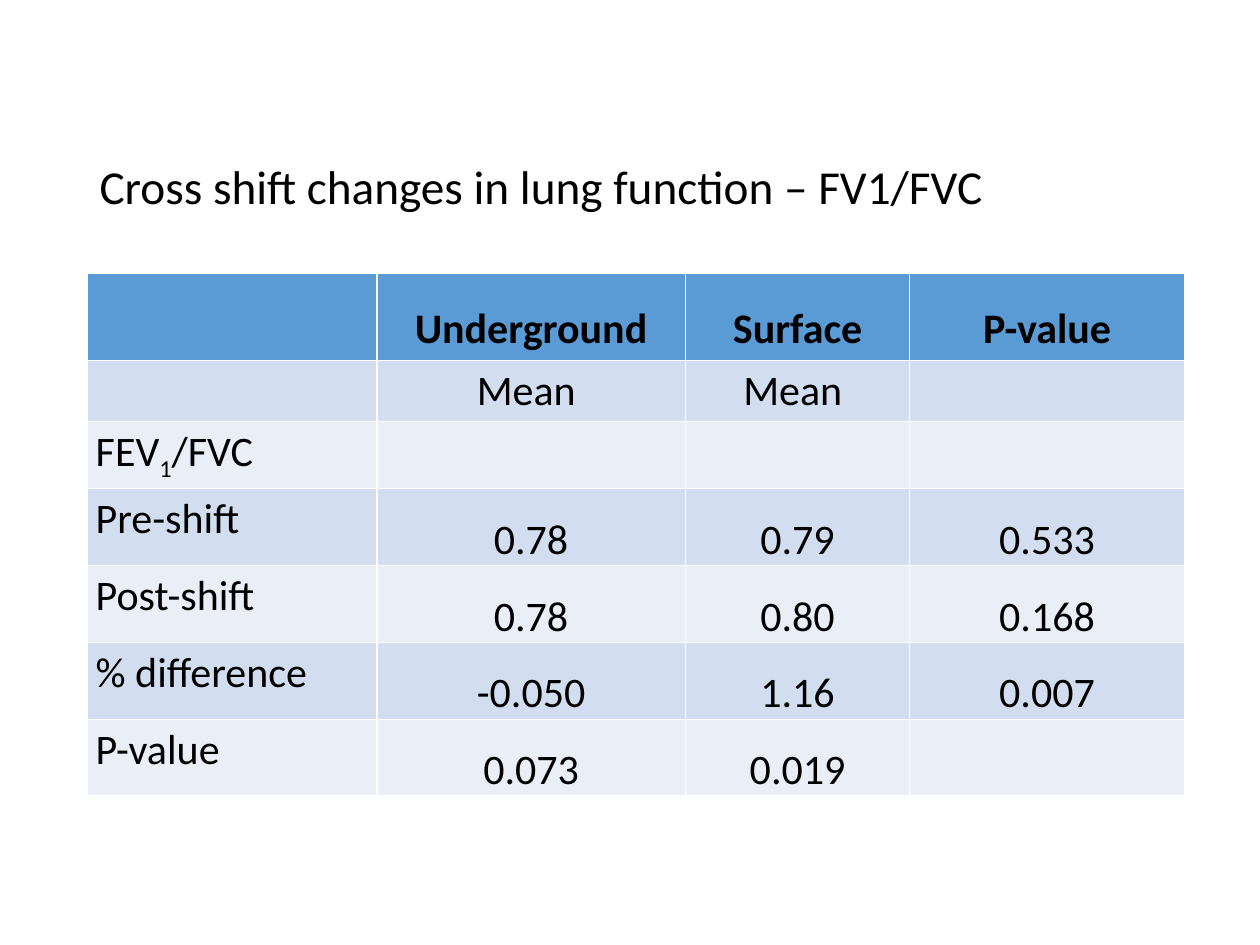
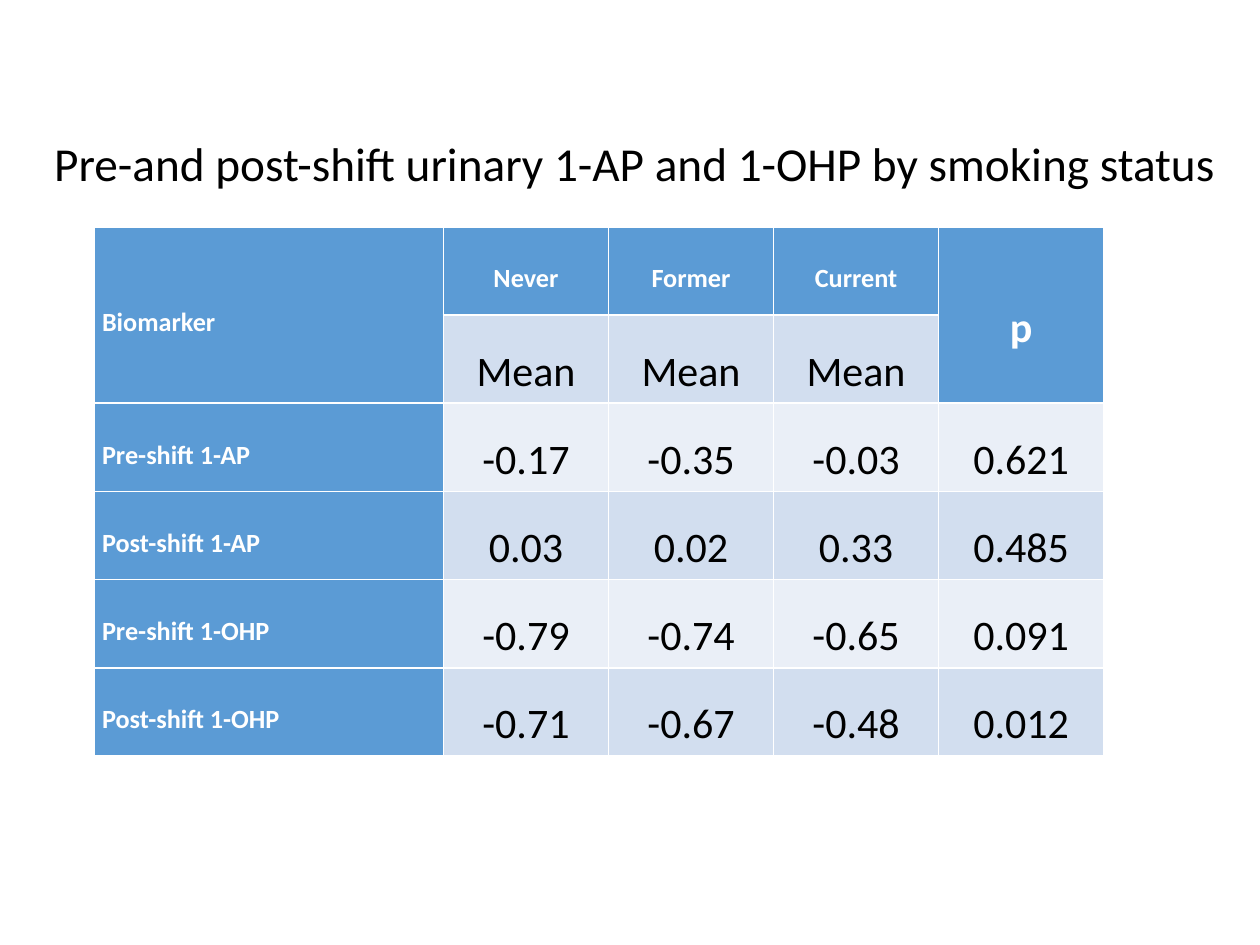
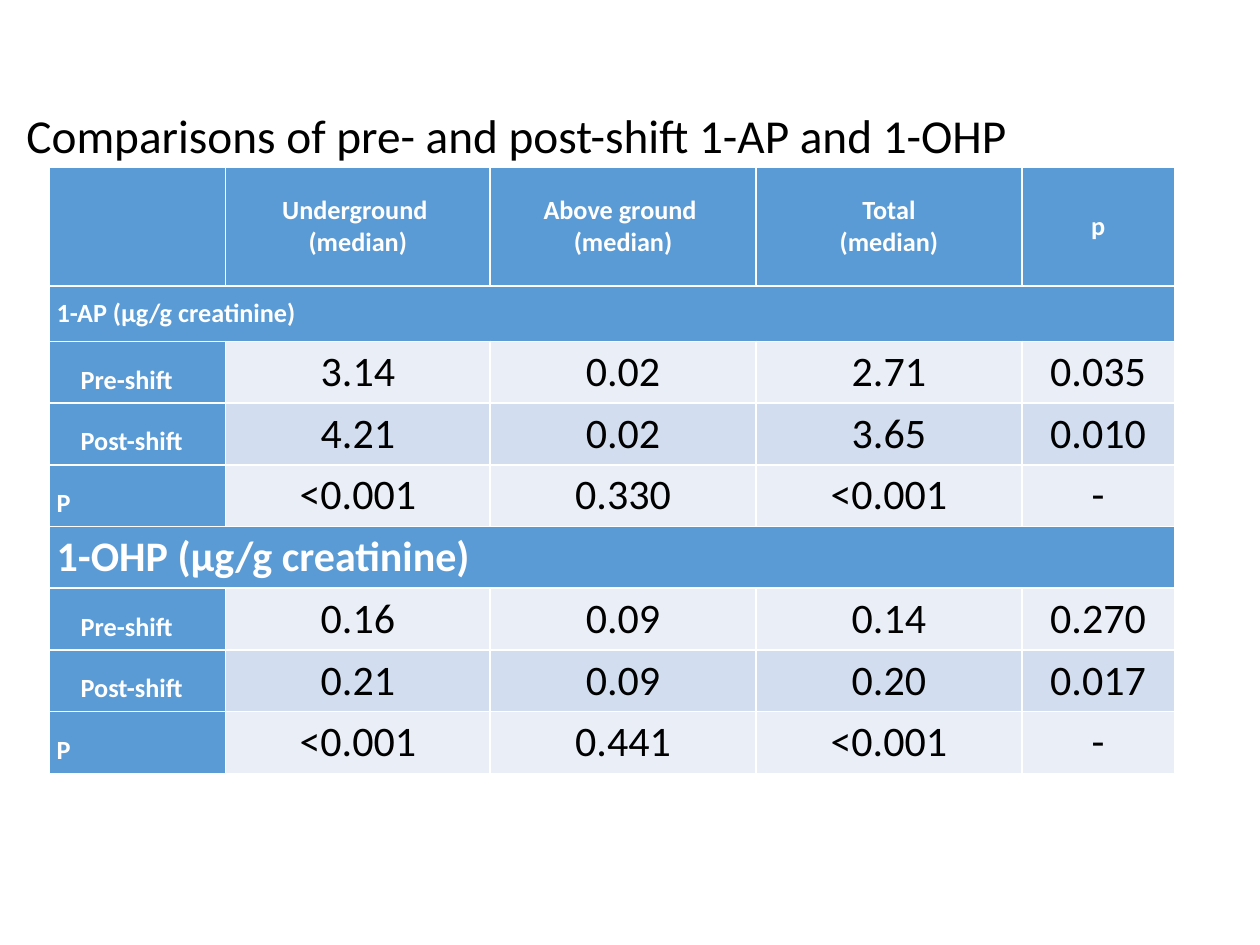
"""Build three slides of lung function and urinary biomarker tables."""
from dataclasses import dataclass, replace
from typing import NamedTuple, Optional

from pptx import Presentation
from pptx import util as u
from pptx.dml.color import RGBColor
from pptx.enum import text as t

PX = 9144
FONT = "Calibri"
TITLE_SIZE = 27
BLACK = RGBColor(0x00, 0x00, 0x00)
WHITE = RGBColor(0xFF, 0xFF, 0xFF)
BLUE = RGBColor(0x5B, 0x9B, 0xD5)
BANDS = (RGBColor(0xEA, 0xEF, 0xF7), RGBColor(0xD2, 0xDE, 0xEF))
SUBSCRIPT_MARK = "|"


class Box(NamedTuple):
    left: int
    top: int
    width: int
    height: int


@dataclass(frozen=True)
class CellStyle:
    size: int = 24
    color: RGBColor = BLACK
    bold: bool = False
    align: t.PP_ALIGN = t.PP_ALIGN.CENTER
    spacing: float = 1.0
    anchor: t.MSO_ANCHOR = t.MSO_ANCHOR.MIDDLE
    pad_x: int = 6
    pad_y: int = 0
    indent: int = 0
    fill: Optional[RGBColor] = None


class Row(NamedTuple):
    height: int
    texts: tuple[str, ...]
    styles: tuple[CellStyle, ...]


class Span(NamedTuple):
    top: int
    left: int
    bottom: int
    right: int


@dataclass(frozen=True)
class TablePage:
    title: str
    title_box: Box
    left: int
    top: int
    columns: tuple[int, ...]
    rows: list[Row]
    spans: tuple[Span, ...] = ()


VALUE = CellStyle()
SPACED_VALUE = replace(VALUE, spacing=1.5)
LOOSE_VALUE = replace(VALUE, anchor=t.MSO_ANCHOR.TOP, pad_x=7, pad_y=4)
LOOSE_LABEL = replace(LOOSE_VALUE, align=t.PP_ALIGN.LEFT)

DARK_HEAD = replace(SPACED_VALUE, bold=True, fill=BLUE)
LOOSE_HEAD = replace(DARK_HEAD, pad_x=7, pad_y=4)
TOP_HEAD = replace(LOOSE_HEAD, anchor=t.MSO_ANCHOR.TOP)

HEAD = CellStyle(size=15, color=WHITE, bold=True, fill=BLUE)
SPACED_HEAD = replace(HEAD, spacing=1.5)
LARGE_HEAD = replace(SPACED_HEAD, size=24)
SECTION = replace(HEAD, align=t.PP_ALIGN.LEFT)
LARGE_SECTION = replace(SECTION, size=24)
LABEL = replace(SECTION, spacing=1.5)
INDENTED_LABEL = replace(LABEL, indent=19)


def data_row(height: int, label: CellStyle, value: CellStyle, *texts: str) -> Row:
    """Make a row of one label followed by equally styled values."""
    return Row(height, texts, (label,) + (value,) * (len(texts) - 1))


def lung_page() -> TablePage:
    """Describe the lung function table."""
    rows = [
        Row(68, ("", "Underground", "Surface", "P-value"),
            (DARK_HEAD, DARK_HEAD, TOP_HEAD, LOOSE_HEAD)),
        data_row(47, LOOSE_LABEL, LOOSE_VALUE, "", "Mean ", "Mean ", ""),
        data_row(47, LOOSE_LABEL, LOOSE_VALUE, "FEV|1|/FVC", "", "", ""),
    ]
    measures = (
        ("Pre-shift", "0.78", "0.79", "0.533"),
        ("Post-shift", "0.78", "0.80", "0.168"),
        ("% difference", "-0.050", "1.16", "0.007"),
        ("P-value", "0.073", "0.019", ""),
    )
    rows += [data_row(60, LOOSE_LABEL, SPACED_VALUE, *texts) for texts in measures]
    return TablePage("Cross shift changes in lung function – FV1/FVC",
                     Box(69, 96, 862, 109), 69, 217, (230, 245, 178, 218), rows)


def smoking_page() -> TablePage:
    """Describe the biomarker table by smoking status."""
    rows = [
        Row(70, ("Biomarker", "Never", "Former", "Current", "p"),
            (LABEL,) + (SPACED_HEAD,) * 3 + (LARGE_HEAD,)),
        data_row(70, LABEL, SPACED_VALUE, "", "Mean", "Mean", "Mean", ""),
    ]
    measures = (
        ("Pre-shift 1-AP", "-0.17", "-0.35", "-0.03", "0.621"),
        ("Post-shift 1-AP", "0.03", "0.02", "0.33", "0.485"),
        ("Pre-shift 1-OHP", "-0.79", "-0.74", "-0.65", "0.091"),
        ("Post-shift 1-OHP", "-0.71", "-0.67", "-0.48", "0.012"),
    )
    rows += [data_row(70, LABEL, SPACED_VALUE, *texts) for texts in measures]
    return TablePage("Pre-and post-shift urinary 1-AP and 1-OHP by smoking status",
                     Box(33, 77, 967, 109), 75, 180, (277,) + (131,) * 4, rows,
                     (Span(0, 0, 1, 0), Span(0, 4, 1, 4)))


def section_rows(height: int, title: str, style: CellStyle,
                 pre: tuple[str, ...], post: tuple[str, ...],
                 p_values: tuple[str, ...]) -> list[Row]:
    """Make a section heading and its three rows."""
    return [
        data_row(height, style, style, title, "", "", "", ""),
        data_row(49, INDENTED_LABEL, VALUE, "Pre-shift", *pre),
        data_row(49, INDENTED_LABEL, VALUE, "Post-shift", *post),
        data_row(49, LABEL, VALUE, "P", *p_values),
    ]


def comparison_page() -> TablePage:
    """Describe the comparison of medians."""
    rows = [data_row(94, HEAD, HEAD, "", "Underground \n(median)",
                     "Above ground \n(median)", "Total\n(median)", "p")]
    rows += section_rows(44, "1-AP (µg/g creatinine)", SECTION,
                         ("3.14", "0.02", "2.71", "0.035"),
                         ("4.21", "0.02", "3.65", "0.010"),
                         ("<0.001", "0.330", "<0.001", "-"))
    rows += section_rows(49, "1-OHP (µg/g creatinine)", LARGE_SECTION,
                         ("0.16", "0.09", "0.14", "0.270"),
                         ("0.21", "0.09", "0.20", "0.017"),
                         ("<0.001", "0.441", "<0.001", "-"))
    return TablePage("Comparisons of pre- and post-shift 1-AP and 1-OHP",
                     Box(11, 86, 947, 47), 39, 133, (140, 210, 211, 211, 121), rows,
                     (Span(1, 0, 1, 4), Span(5, 0, 5, 4)))


def format_span(span, size: int, color: RGBColor, bold: bool = False) -> None:
    """Set the font of one run."""
    span.font.name = FONT
    span.font.size = u.Pt(size)
    span.font.bold = bold
    span.font.color.rgb = color


def draw_title(page, title: str, box: Box) -> None:
    """Place and format the title placeholder."""
    shape = page.shapes.title
    shape.left, shape.top, shape.width, shape.height = (n * PX for n in box)
    frame = shape.text_frame
    frame.text = title
    frame.word_wrap = True
    frame.auto_size = t.MSO_AUTO_SIZE.NONE
    frame.vertical_anchor = t.MSO_ANCHOR.MIDDLE
    para = frame.paragraphs[0]
    para.alignment = t.PP_ALIGN.LEFT
    para.line_spacing = 0.9
    para.space_before = u.Pt(0)
    format_span(para.runs[0], TITLE_SIZE, BLACK)


def write_cell(cell, content: str, style: CellStyle) -> None:
    """Write text into a cell, lowering every marked second piece."""
    cell.vertical_anchor = style.anchor
    cell.margin_left = (style.pad_x + style.indent) * PX
    cell.margin_right = style.pad_x * PX
    cell.margin_top = cell.margin_bottom = style.pad_y * PX
    frame = cell.text_frame
    frame.text = content
    for para in frame.paragraphs:
        para.alignment = style.align
        para.line_spacing = style.spacing
        para.text, *pieces = para.text.split(SUBSCRIPT_MARK)
        for piece in pieces:
            para.add_run().text = piece
        for span in para.runs:
            format_span(span, style.size, style.color, style.bold)
        for span in para.runs[1::2]:
            span.font._element.set("baseline", "-25000")


def draw_table(page, plan: TablePage) -> None:
    """Draw the table with header and banded fills."""
    height = sum(row.height for row in plan.rows)
    table = page.shapes.add_table(
        len(plan.rows), len(plan.columns), plan.left * PX, plan.top * PX,
        sum(plan.columns) * PX, height * PX).table
    for column, width in zip(table.columns, plan.columns):
        column.width = width * PX
    for index, row in enumerate(plan.rows):
        table.rows[index].height = row.height * PX
        for cell, content, style in zip(table.rows[index].cells, row.texts, row.styles):
            cell.fill.solid()
            cell.fill.fore_color.rgb = style.fill or BANDS[index % 2]
            if content:
                write_cell(cell, content, style)
    for span in plan.spans:
        table.cell(span.top, span.left).merge(table.cell(span.bottom, span.right))


def main() -> None:
    """Build and save the deck."""
    deck = Presentation()
    deck.slide_width, deck.slide_height = 1000 * PX, 750 * PX
    title_only = deck.slide_layouts[5]
    for plan in (lung_page(), smoking_page(), comparison_page()):
        page = deck.slides.add_slide(title_only)
        draw_title(page, plan.title, plan.title_box)
        draw_table(page, plan)
    deck.save("out.pptx")


if __name__ == "__main__":
    main()
